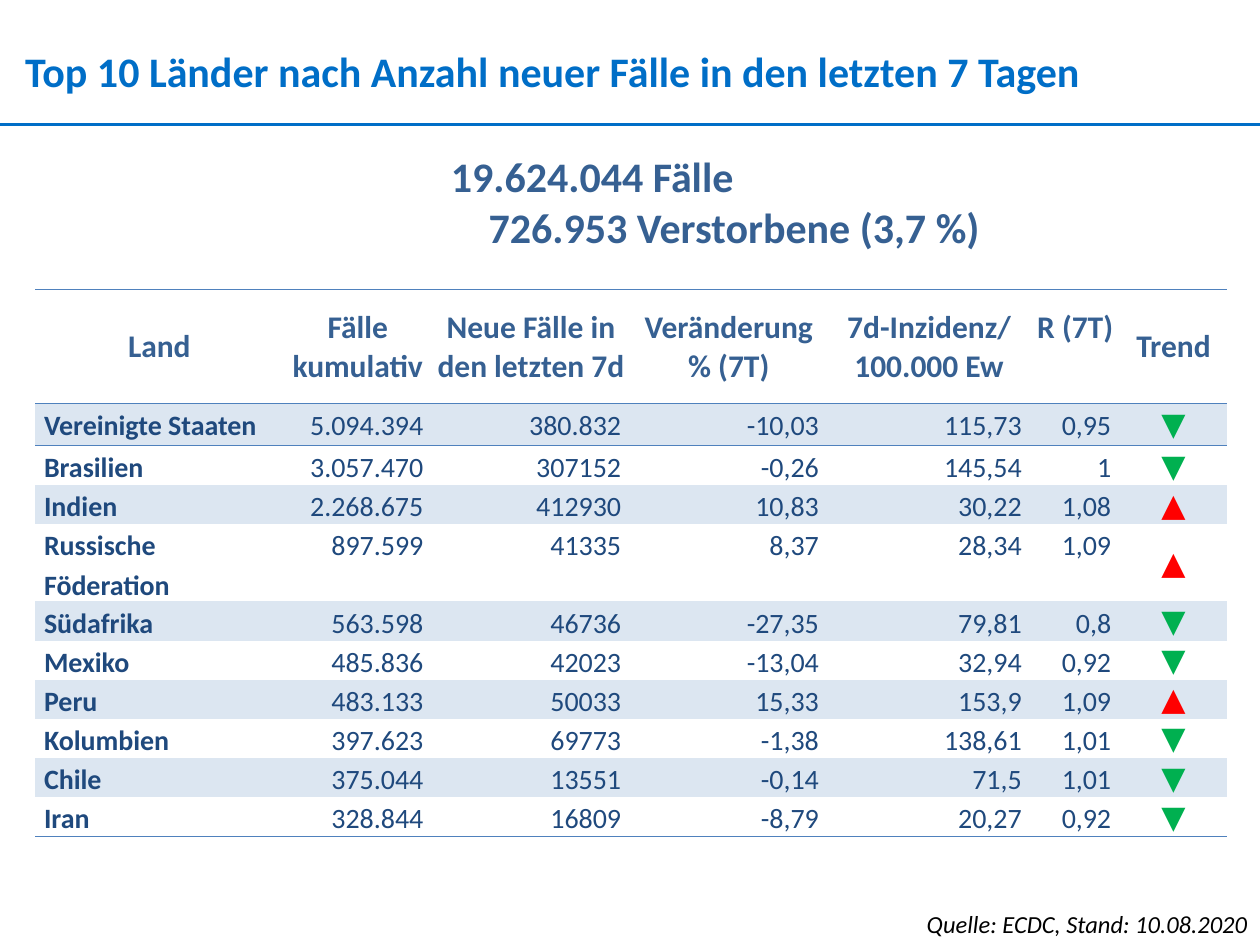
import pptx
import pptx.util
import pptx.dml.color
import pptx.enum.text
import pptx.enum.shapes
import pptx.oxml
import lxml.etree

theme = {
    "font": "Calibri",
    "title": "006EC7", "head": "366092", "body": "1F497D", "note": "000000",
    "rule": "4F81BD", "band": "DCE6F1", "▼": "00B050", "▲": "FF0000",
    "big": 24, "mid": 18, "small": 16, "tiny": 14,
}
names = ["Land", "Fälle kumulativ", "Neue Fälle in den letzten 7d",
         "Veränderung % (7T)", "7d-Inzidenz/ 100.000 Ew", "R (7T)", "Trend"]
data = [
    ["Vereinigte Staaten", "5.094.394", "380.832", "-10,03", "115,73", "0,95", "▼"],
    ["Brasilien", "3.057.470", "307152", "-0,26", "145,54", "1", "▼"],
    ["Indien", "2.268.675", "412930", "10,83", "30,22", "1,08", "▲"],
    ["Russische Föderation", "897.599", "41335", "8,37", "28,34", "1,09", "▲"],
    ["Südafrika", "563.598", "46736", "-27,35", "79,81", "0,8", "▼"],
    ["Mexiko", "485.836", "42023", "-13,04", "32,94", "0,92", "▼"],
    ["Peru", "483.133", "50033", "15,33", "153,9", "1,09", "▲"],
    ["Kolumbien", "397.623", "69773", "-1,38", "138,61", "1,01", "▼"],
    ["Chile", "375.044", "13551", "-0,14", "71,5", "1,01", "▼"],
    ["Iran", "328.844", "16809", "-8,79", "20,27", "0,92", "▼"],
]
inch = pptx.util.Inches
align = pptx.enum.text.PP_ALIGN
anchor = pptx.enum.text.MSO_ANCHOR

deck = pptx.Presentation()
deck.slide_width, deck.slide_height = inch(10), inch(7.5)
wide, high = deck.slide_width / 100, deck.slide_height / 100


def place(left, top, width, height):
    return [int(n) for n in (left * wide, top * high, width * wide, height * high)]


def style(par, size, color, side=align.LEFT, bold=False, slant=False):
    par.alignment = side
    font = par.font
    font.name, font.size = theme["font"], pptx.util.Pt(theme[size])
    font.bold, font.italic = bold, slant
    font.color.rgb = pptx.dml.color.RGBColor.from_string(theme[color])


slide = deck.slides.add_slide(deck.slide_layouts[5])
title = slide.shapes.title
title.left, title.top, title.width, title.height = place(2, 4.8, 96.3, 5.4)
frame = title.text_frame
frame.margin_left = frame.margin_right = frame.margin_top = frame.margin_bottom = 0
frame.vertical_anchor = anchor.MIDDLE
frame.text = "Top 10 Länder nach Anzahl neuer Fälle in den letzten 7 Tagen"
style(frame.paragraphs[0], "big", "title", bold=True)

left, top, right, low = place(0, 13.2, 100, 13.2)
line = slide.shapes.add_connector(
    pptx.enum.shapes.MSO_CONNECTOR.STRAIGHT, left, top, right, low)
line.line.color.rgb = pptx.dml.color.RGBColor.from_string(theme["title"])
line.line.width = pptx.util.Pt(1.5)
lxml.etree.SubElement(line._element.spPr, pptx.oxml.ns.qn("a:effectLst"))

total = slide.shapes.add_textbox(*place(34.8, 15.3, 46, 12.1)).text_frame
total.word_wrap = True
total.text = "19.624.044 Fälle\n726.953 Verstorbene (3,7 %)"
for par in total.paragraphs:
    style(par, "big", "head", bold=True)
total.paragraphs[1]._p.get_or_add_pPr().set("marL", str(inch(0.3)))

note = slide.shapes.add_textbox(*place(64.6, 95.5, 35.4, 4.5)).text_frame
note.word_wrap = True
note.text = "Quelle: ECDC, Stand: 10.08.2020"
style(note.paragraphs[0], "tiny", "note", align.RIGHT, slant=True)

cols = [19.7, 11.8, 15.7, 15.7, 16.1, 7.1, 8.5]
rows = [12, 4.5, 4.13, 4.13, 8.2] + [4.13] * 6
grid = slide.shapes.add_table(
    len(rows), len(cols), *place(2.8, 30.67, sum(cols), sum(rows))).table
grid.first_row = grid.horz_banding = False
grid._tbl.tblPr.find(pptx.oxml.ns.qn("a:tableStyleId")).text = (
    "{2D5ABB26-0587-4C30-8999-92F81FD0307C}")
for col, share in zip(grid.columns, cols):
    col.width = int(share * wide)
for row, share in zip(grid.rows, rows):
    row.height = int(share * high)

for r, texts in enumerate([names] + data):
    edges = {0: ["lnT", "lnB"], 1: ["lnT"], len(data): ["lnB"]}.get(r, [])
    for c, text in enumerate(texts):
        cell = grid.cell(r, c)
        cell.text = text
        par = cell.text_frame.paragraphs[0]
        head, trend = r == 0, c == len(cols) - 1
        if head or trend:
            cell.margin_left = cell.margin_right = cell.margin_top = inch(0.01)
            cell.vertical_anchor = anchor.MIDDLE
            style(par, "mid", "head" if head else text, align.CENTER, bold=head)
        else:
            cell.margin_left = cell.margin_right = inch(0.07)
            cell.margin_top = 0
            style(par, "small", "body", align.RIGHT if c else align.LEFT, bold=c == 0)
            par.line_spacing = 1.15
        cell.margin_bottom = 0
        if text == "R (7T)":
            cell.vertical_anchor = anchor.TOP
            cell.margin_top = inch(0.15)
        if r % 2:
            cell.fill.solid()
            cell.fill.fore_color.rgb = pptx.dml.color.RGBColor.from_string(theme["band"])
        else:
            cell.fill.background()
        for spot, edge in enumerate(edges):
            cell._tc.get_or_add_tcPr().insert(spot, pptx.oxml.parse_xml(
                f'<a:{edge} {pptx.oxml.ns.nsdecls("a")} w="6350"><a:solidFill>'
                f'<a:srgbClr val="{theme["rule"]}"/></a:solidFill></a:{edge}>'))

deck.save("out.pptx")
